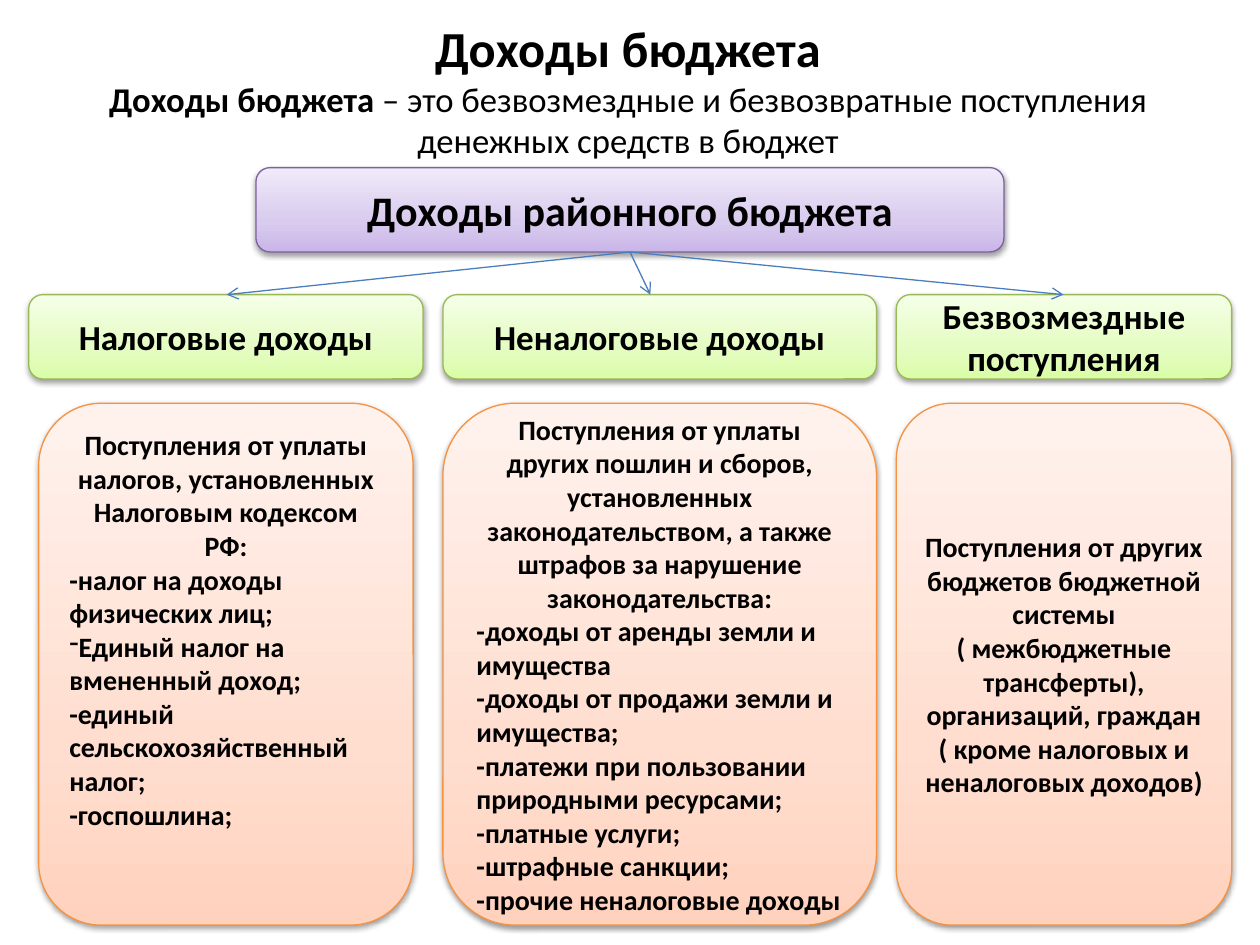
from lxml import etree
from pptx import Presentation
from pptx.dml.color import RGBColor
from pptx.enum.shapes import MSO_CONNECTOR, MSO_SHAPE
from pptx.enum.text import MSO_ANCHOR, MSO_AUTO_SIZE, PP_ALIGN
from pptx.oxml import parse_xml
from pptx.oxml.ns import nsdecls, qn
from pptx.util import Cm, Pt

COLORS = {"text": "000000", "arrow": "4B7EBC"}
# Each style: outline, then gradient stops from bottom to top
STYLES = {
    "root": ("7D60A0", ("C9B5E8", "D8CBEE", "F0EAF9")),
    "header": ("98B955", ("DAFDA7", "E4FCC2", "F5FFE7")),
    "detail": ("F69240", ("FFD2BD", "FFDED0", "FFF2ED")),
}
STOPS = (0, 35, 100)
FONT = "Calibri"

TITLE_RUNS = [
    ("Доходы бюджета", 28.8, True),
    ("Доходы бюджета ", 19.8, True),
    ("– это безвозмездные и безвозвратные поступления денежных средств в бюджет", 19.8, False),
]
ROOT = "Доходы районного бюджета"
COLUMNS = [
    {
        "header": "Налоговые доходы",
        "width": 7.95, "inset": 0.2, "arrow_x": 4.57, "anchor": MSO_ANCHOR.TOP,
        "intro": "Поступления от уплаты налогов, установленных Налоговым кодексом РФ:",
        "items": ["-налог на доходы физических лиц;", "Единый налог на вмененный доход;",
                  "-единый сельскохозяйственный налог;", "-госпошлина;"],
    },
    {
        "header": "Неналоговые доходы",
        "width": 8.74, "inset": 0, "arrow_x": 13.11, "anchor": MSO_ANCHOR.MIDDLE,
        "intro": "Поступления от уплаты других пошлин и сборов, установленных "
                 "законодательством, а также штрафов за нарушение законодательства:",
        "items": ["-доходы от аренды земли и имущества", "-доходы от продажи земли и имущества;",
                  "-платежи при пользовании природными ресурсами;", "-платные услуги;",
                  "-штрафные санкции;", "-прочие неналоговые доходы"],
    },
    {
        "header": "Безвозмездные поступления",
        "width": 6.76, "inset": 0, "arrow_x": 21.44, "anchor": MSO_ANCHOR.MIDDLE,
        "intro": "Поступления от других бюджетов бюджетной системы ( межбюджетные "
                 "трансферты), организаций, граждан ( кроме налоговых и неналоговых доходов)",
        "items": [],
    },
]
LEFT, GAP = 0.58, 0.4
HEADER_TOP, HEADER_H = 5.94, 1.7
DETAIL_TOP, DETAIL_H = 8.13, 10.52


def rgb(name):
    return RGBColor.from_string(COLORS[name])


def format_run(r, size, bold=True):
    r.font.name, r.font.size, r.font.bold = FONT, Pt(size), bold
    r.font.color.rgb = rgb("text")


def apply_style(sp, style):
    """Give the box its outline, vertical gradient and soft shadow below."""
    outline, colors = STYLES[style]
    sp.line.color.rgb = RGBColor.from_string(outline)
    sp.line.width = Pt(0.75)
    stops = "".join(f'<a:gs pos="{pos * 1000}"><a:srgbClr val="{color}"/></a:gs>'
                    for pos, color in zip(STOPS, colors))
    sp_pr = sp.element.spPr
    sp_pr.find(qn("a:prstGeom")).addnext(parse_xml(
        f'<a:gradFill {nsdecls("a")} rotWithShape="1"><a:gsLst>{stops}</a:gsLst>'
        '<a:lin ang="16200000" scaled="1"/></a:gradFill>'))
    sp.shadow.inherit = False
    sp_pr.find(qn("a:effectLst")).append(parse_xml(
        f'<a:outerShdw {nsdecls("a")} blurRad="40000" dist="20000" dir="5400000" '
        'rotWithShape="0"><a:srgbClr val="000000"><a:alpha val="38000"/></a:srgbClr></a:outerShdw>'))


def add_box(s, style, box, lines, size, anchor=MSO_ANCHOR.MIDDLE):
    """Add a rounded box: first line centred, the others left-aligned."""
    sp = s.shapes.add_shape(MSO_SHAPE.FLOWCHART_ALTERNATE_PROCESS, *map(Cm, box))
    apply_style(sp, style)
    tf = sp.text_frame
    tf.text = "\n".join(lines)
    tf.word_wrap, tf.vertical_anchor = True, anchor
    for i, p in enumerate(tf.paragraphs):
        p.alignment = PP_ALIGN.LEFT if i else PP_ALIGN.CENTER
        format_run(p.runs[0], size)
        if i and not p.text.startswith("-"):
            etree.SubElement(p._p.get_or_add_pPr(), qn("a:buChar"), char="-")
    return sp


def add_arrow(s, root, x, y):
    line = s.shapes.add_connector(MSO_CONNECTOR.STRAIGHT, 0, 0, Cm(x), Cm(y))
    line.begin_connect(root, 2)
    line.line.color.rgb = rgb("arrow")
    line.line.width = Pt(0.75)
    etree.SubElement(line.line._get_or_add_ln(), qn("a:tailEnd"), type="arrow")
    etree.SubElement(line.element.spPr, qn("a:effectLst"))


def fill_title(title):
    title.left, title.top, title.width, title.height = map(Cm, (1.19, 0.41, 22.94, 2.77))
    tf = title.text_frame
    tf.word_wrap, tf.auto_size = True, MSO_AUTO_SIZE.NONE
    tf.vertical_anchor = MSO_ANCHOR.MIDDLE
    p = tf.paragraphs[0]
    p.alignment = PP_ALIGN.CENTER
    for i, (text, size, bold) in enumerate(TITLE_RUNS):
        if i == 1:
            p.add_line_break()
        r = p.add_run()
        r.text = text
        format_run(r, size, bold)


def main():
    prs = Presentation()
    prs.slide_width, prs.slide_height = Cm(25.4), Cm(19.05)
    s = prs.slides.add_slide(prs.slide_layouts[5])
    fill_title(s.shapes.title)
    root = add_box(s, "root", (5.16, 3.38, 15.08, 1.7), [ROOT], 24)

    x = LEFT
    for col in COLUMNS:
        width, inset = col["width"], col["inset"]
        add_box(s, "header", (x, HEADER_TOP, width, HEADER_H), [col["header"]], 20)
        add_box(s, "detail", (x + inset, DETAIL_TOP, width - 2 * inset, DETAIL_H),
                [col["intro"], *col["items"]], 16, col["anchor"])
        add_arrow(s, root, col["arrow_x"], HEADER_TOP)
        x += width + GAP

    prs.save("out.pptx")


if __name__ == "__main__":
    main()
